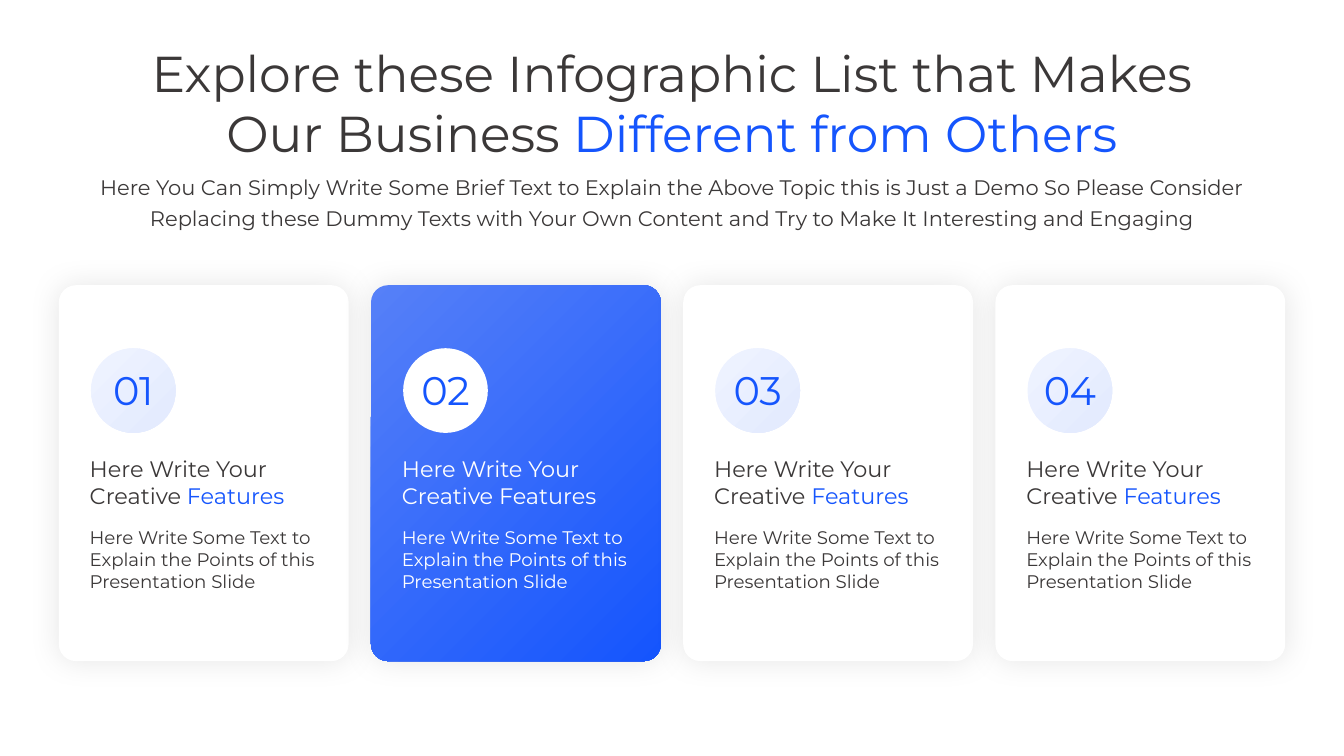
from lxml import etree
from pptx import Presentation
from pptx.dml.color import RGBColor
from pptx.enum import shapes, text
from pptx.oxml import ns
from pptx.util import Pt

FONT = "Montserrat"
DARK, BLUE, SKY, WHITE = "3B3838", "1555FD", "5680F8", "FFFFFF"
PALE, MIST = "E2E9FE", "EFF4FF"


def color(code):
    return RGBColor.from_string(code)


def add(parent, tag, **attrs):
    return etree.SubElement(parent, ns.qn(tag), attrs)


def write(slide, box, lines, size, tint, accent=BLUE, center=False, lead=None, track=None):
    """Place a text box; the part of a line after "|" takes the accent colour."""
    frame = slide.shapes.add_textbox(*map(Pt, box)).text_frame
    frame.word_wrap = False
    frame.auto_size = text.MSO_AUTO_SIZE.SHAPE_TO_FIT_TEXT
    for i, line in enumerate(lines):
        para = frame.paragraphs[0] if i == 0 else frame.add_paragraph()
        para.alignment = text.PP_ALIGN.CENTER if center else text.PP_ALIGN.LEFT
        if lead:
            para.line_spacing = Pt(lead)
        for part, shade in zip(line.split("|"), (tint, accent)):
            run = para.add_run()
            run.text = part
            run.font.name, run.font.size = FONT, Pt(size)
            run.font.color.rgb = color(shade)
            if track:
                run.font._element.set("spc", str(track))


def paint(shape, *codes):
    """Fill with one colour, or with a glow of two from the lower right corner."""
    shape.line.fill.background()
    shape.shadow.inherit = False
    if len(codes) == 1:
        shape.fill.solid()
        shape.fill.fore_color.rgb = color(codes[0])
        return
    shape.fill.gradient()
    for stop, code in zip(shape.fill.gradient_stops, codes):
        stop.color.rgb = color(code)
    # Swap the linear direction for a circular one
    grad = shape._element.spPr.find(ns.qn("a:gradFill"))
    grad.remove(grad.find(ns.qn("a:lin")))
    ring = add(grad, "a:path", path="circle")
    add(ring, "a:fillToRect", l="100000", t="100000")


def shade(shape):
    """Add a soft, even shadow."""
    effects = shape._element.spPr.find(ns.qn("a:effectLst"))
    soft = add(effects, "a:outerShdw", blurRad=str(Pt(22)), dist="0", dir="0",
               algn="ctr", rotWithShape="0")
    black = add(soft, "a:srgbClr", val="000000")
    add(black, "a:alpha", val="10000")


def header(slide, x, y, w):
    write(slide, (x, y, w, 94.5),
          ["Explore these Infographic List that Makes",
           "Our Business |Different from Others"], 36, DARK, center=True)
    write(slide, (x, y + 90.5, w, 50),
          ["Here You Can Simply Write Some Brief Text to Explain the Above Topic "
           "this is Just a Demo So Please Consider",
           "Replacing these Dummy Texts with Your Own Content and Try to Make It "
           "Interesting and Engaging"], 15, DARK, center=True, lead=22)


def card(slide, x, y, w, h, label, bold):
    tint, accent = (WHITE, WHITE) if bold else (DARK, BLUE)

    # Panel
    panel = slide.shapes.add_shape(shapes.MSO_SHAPE.ROUNDED_RECTANGLE,
                                   *map(Pt, (x, y, w, h)))
    panel.adjustments[0] = 0.059
    paint(panel, *((BLUE, SKY) if bold else (WHITE,)))
    shade(panel)

    # Number badge
    size = 60.5
    badge = slide.shapes.add_shape(shapes.MSO_SHAPE.OVAL,
                                   *map(Pt, (x + 23, y + 45, size, size)))
    paint(badge, *((WHITE,) if bold else (PALE, MIST)))
    write(slide, (x + 23, y + 54, size, 42), [label], 28.5, BLUE, center=True, track=-30)

    # Heading and body
    write(slide, (x + 15, y + 118, 167, 46.5),
          ["Here Write Your", "Creative |Features" if not bold else "Creative Features"],
          16, tint, accent)
    write(slide, (x + 15, y + 169, 177, 55),
          ["Here Write Some Text to", "Explain the Points of this", "Presentation Slide"],
          13, tint)


def main():
    deck = Presentation()
    deck.slide_width, deck.slide_height = Pt(960), Pt(540)
    slide = deck.slides.add_slide(deck.slide_layouts[6])
    header(slide, 48, 26.5, 864)
    for i in range(4):
        card(slide, 42 + 223 * i, 203.75, 207, 268.5, f"{i + 1:02}", bold=i == 1)
    deck.save("out.pptx")


if __name__ == "__main__":
    main()
